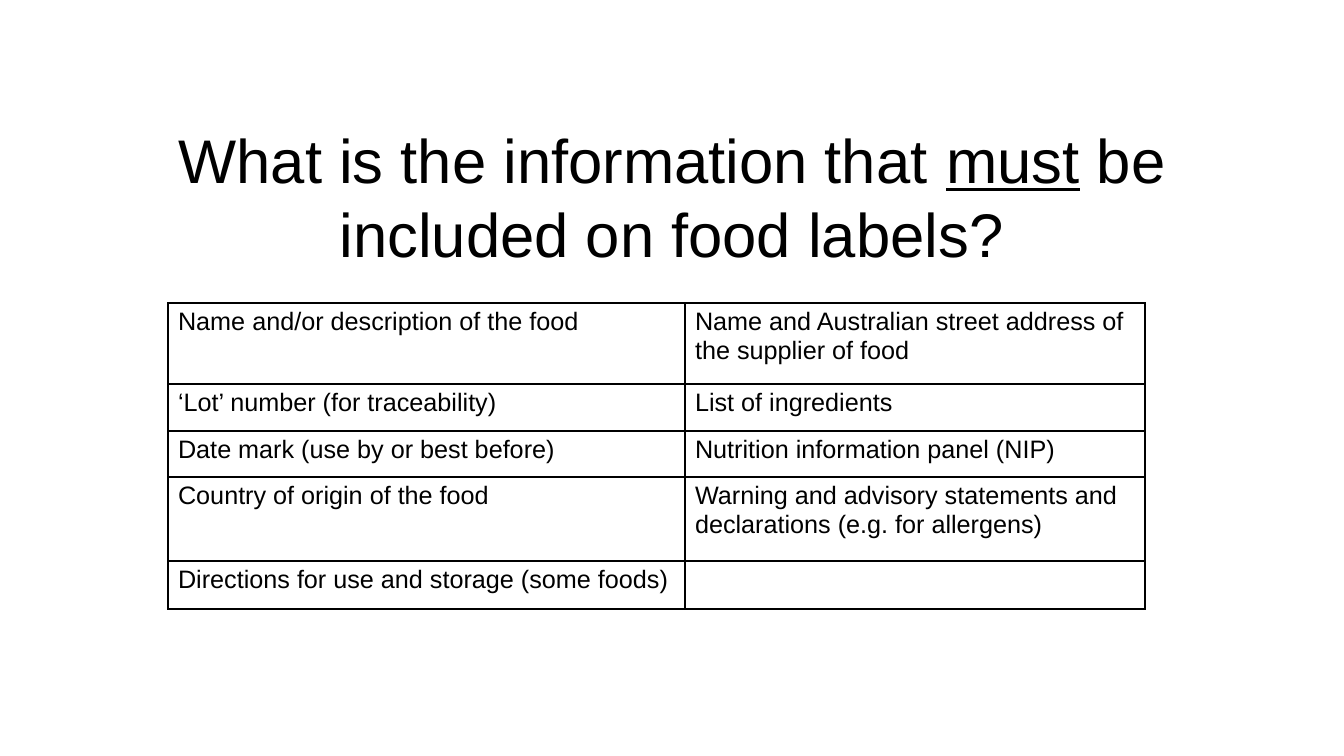
"""Build a slide listing the information required on food labels."""
from lxml import etree
from pptx import Presentation
from pptx import util as u
from pptx.dml.color import RGBColor
from pptx.enum import text
from pptx.oxml.ns import qn

PX = 914400 / 100.8
BLACK = RGBColor(0, 0, 0)
WHITE = RGBColor(255, 255, 255)
FONT = "Arial"


def px(*lengths):
    return [u.Emu(round(length * PX)) for length in lengths]


def style(font, size):
    font.name = FONT
    font.size = u.Pt(size)
    font.color.rgb = BLACK


deck = Presentation()
deck.slide_width, deck.slide_height = px(1344, 756)
page = deck.slides.add_slide(deck.slide_layouts[5])
page.background.fill.solid()
page.background.fill.fore_color.rgb = WHITE

title = page.shapes.title
title.left, title.top, title.width, title.height = px(117, 116, 1110, 159)
frame = title.text_frame
frame.word_wrap = True
frame.auto_size = text.MSO_AUTO_SIZE.NONE
frame.vertical_anchor = text.MSO_ANCHOR.MIDDLE
para = frame.paragraphs[0]
para.alignment = text.PP_ALIGN.CENTER
for words in ("What is the information that ", "must", " be included on food labels?"):
    span = para.add_run()
    span.text = words
    style(span.font, 44)
    span.font.underline = words == "must"

label_items = [
    ("Name and/or description of the food",
     "Name and Australian street address of the supplier of food"),
    ("‘Lot’ number (for traceability)", "List of ingredients"),
    ("Date mark (use by or best before)", "Nutrition information panel (NIP)"),
    ("Country of origin of the food",
     "Warning and advisory statements and declarations (e.g. for allergens)"),
    ("Directions for use and storage (some foods)", ""),
]
column_widths = px(517, 460)
row_heights = px(81, 47, 46, 84, 48)
left, top = px(168, 303)
table = page.shapes.add_table(
    len(label_items), 2, left, top, sum(column_widths), sum(row_heights)).table
table.first_row = False
table.horz_banding = False
for column, width in zip(table.columns, column_widths):
    column.width = width
for row, height, items in zip(table.rows, row_heights, label_items):
    row.height = height
    for cell, item in zip(row.cells, items):
        cell.text_frame.text = item
        style(cell.text_frame.paragraphs[0].font, 18)
        for span in cell.text_frame.paragraphs[0].runs:
            style(span.font, 18)
        properties = cell._tc.get_or_add_tcPr()
        for side in ("a:lnL", "a:lnR", "a:lnT", "a:lnB"):
            line = etree.SubElement(properties, qn(side), w=str(u.Pt(1)))
            paint = etree.SubElement(line, qn("a:solidFill"))
            etree.SubElement(paint, qn("a:srgbClr"), val=str(BLACK))
        cell.fill.background()

deck.save("out.pptx")
